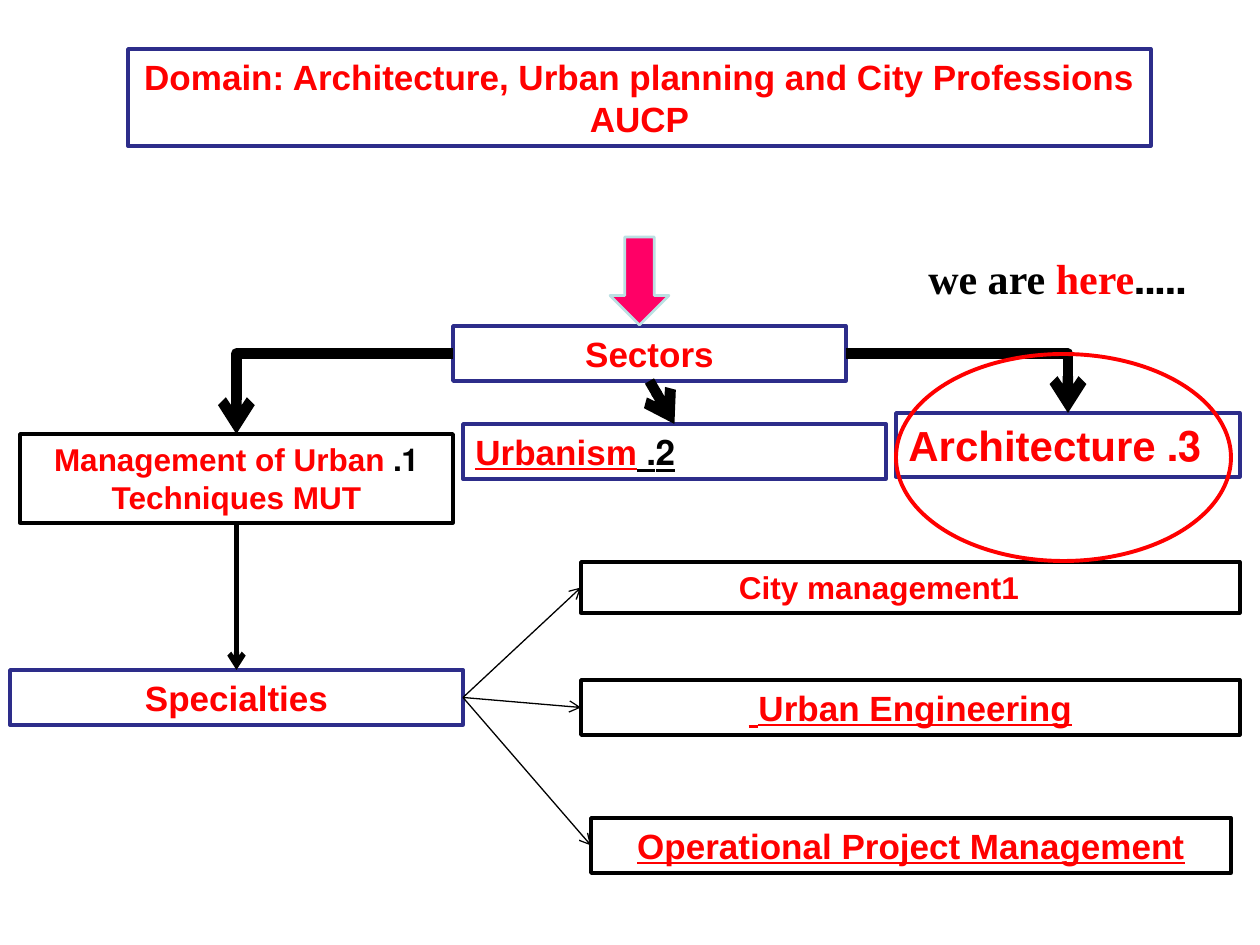
from pptx import Presentation
from pptx import util as u
from pptx.dml.color import RGBColor
from pptx.enum import shapes, text
from pptx.oxml.ns import qn
from lxml import etree

PX = 914400 // 126
HUES = {"red": "FF0000", "black": "000000", "navy": "2D2D8A", "white": "FFFFFF",
        "pink": "FF0066", "pale": "BBE0E3"}
MID, LEFT = text.PP_ALIGN.CENTER, text.PP_ALIGN.LEFT
TOP, WEST, LOW, EAST = range(4)

# name: box in px, line colour, size, align, underline, level, runs
BOXES = {
    "domain": ((128, 49, 1023, 97), "navy", 20, MID, False, 0,
               [("Domain: Architecture, Urban planning and City Professions AUCP", "red")]),
    "sectors": ((453, 326, 393, 55), "navy", 20, MID, False, 0, [("Sectors", "red")]),
    "mut": ((20, 434, 433, 89), "black", 18, MID, False, 0,
            [("1. ", "black"), ("Management of Urban Techniques MUT", "red")]),
    "urban": ((463, 424, 423, 55), "navy", 20, LEFT, True, 0,
              [("2. ", "black"), ("Urbanism", "red")]),
    "arch": ((896, 413, 344, 64), "navy", 24, LEFT, False, 0, [("3. Architecture", "red")]),
    "special": ((10, 670, 453, 55), "navy", 20, MID, False, 0, [("Specialties", "red")]),
    "city": ((581, 562, 659, 51), "black", 18, MID, False, 1, [("City management1", "red")]),
    "engine": ((581, 680, 659, 55), "black", 20, MID, True, 0, [("Urban Engineering ", "red")]),
    "project": ((591, 818, 640, 55), "black", 20, MID, True, 0,
                [("Operational Project Management", "red")]),
}
NOTE = ((916, 246, 315, 64), [("…..we are ", "black"), ("here", "red")])

# from, side, to, side, width in points, bent
LINKS = [
    ("sectors", WEST, "mut", TOP, 6, True),
    ("sectors", LOW, "urban", TOP, 6, False),
    ("sectors", EAST, "arch", TOP, 6, True),
    ("special", EAST, "city", WEST, 0.75, False),
    ("special", EAST, "engine", WEST, 0.75, False),
    ("special", EAST, "project", WEST, 0.75, False),
    ("mut", LOW, "special", TOP, 3, False),
]

deck = Presentation()
deck.slide_width, deck.slide_height = u.Inches(10), u.Inches(7.5)
slide = deck.slides.add_slide(deck.slide_layouts[6])


def hue(name):
    return RGBColor.from_string(HUES[name])


def scale(box):
    return [n * PX for n in box]


def add_form(kind, box, fill, line, width):
    form = slide.shapes.add_shape(kind, *scale(box))
    form.shadow.inherit = False
    if fill:
        form.fill.solid()
        form.fill.fore_color.rgb = hue(fill)
    else:
        form.fill.background()
    form.line.color.rgb = hue(line)
    form.line.width = u.Pt(width)
    return form


def write(form, runs, size, align, under=False, level=0, face="Arial"):
    frame = form.text_frame
    frame.word_wrap = True
    frame.auto_size = text.MSO_AUTO_SIZE.SHAPE_TO_FIT_TEXT
    frame.vertical_anchor = text.MSO_ANCHOR.TOP
    para = frame.paragraphs[0]
    para.alignment, para.level = align, level
    props = para._p.get_or_add_pPr()
    props.set("rtl", "1")
    props.set("marL", str(level * u.Inches(0.5)))
    font = para.font
    font.name, font.size, font.bold, font.underline = face, u.Pt(size), True, under
    for words, tint in runs:
        run = para.add_run()
        run.text = words
        run.font.color.rgb = hue(tint)


def spot(box, side):
    x, y, w, h = scale(box)
    return [(x + w // 2, y), (x, y + h // 2), (x + w // 2, y + h), (x + w, y + h // 2)][side]


# Boxes
forms = {}
for name, (box, line, size, align, under, level, runs) in BOXES.items():
    forms[name] = add_form(shapes.MSO_SHAPE.RECTANGLE, box, "white", line, 2)
    write(forms[name], runs, size, align, under, level)

# Arrows between boxes
for start, out, end, into, width, bent in LINKS:
    kind = shapes.MSO_CONNECTOR.ELBOW if bent else shapes.MSO_CONNECTOR.STRAIGHT
    link = slide.shapes.add_connector(
        kind, *spot(BOXES[start][0], out), *spot(BOXES[end][0], into))
    link.begin_connect(forms[start], out)
    link.end_connect(forms[end], into)
    link.line.color.rgb = hue("black")
    link.line.width = u.Pt(width)
    props = link._element.spPr
    if bent:
        props.find(qn("a:prstGeom")).set("prst", "bentConnector2")
    etree.SubElement(props.find(qn("a:ln")), qn("a:tailEnd")).set("type", "arrow")
    etree.SubElement(props, qn("a:effectLst"))

# Block arrow, ring and note
add_form(shapes.MSO_SHAPE.DOWN_ARROW, (610, 237, 59, 88), "pink", "pale", 1.5)
add_form(shapes.MSO_SHAPE.OVAL, (896, 354, 335, 207), None, "red", 2.25)
note = slide.shapes.add_textbox(*scale(NOTE[0]))
write(note, NOTE[1], 24, LEFT, face="Times New Roman")

deck.save("out.pptx")
